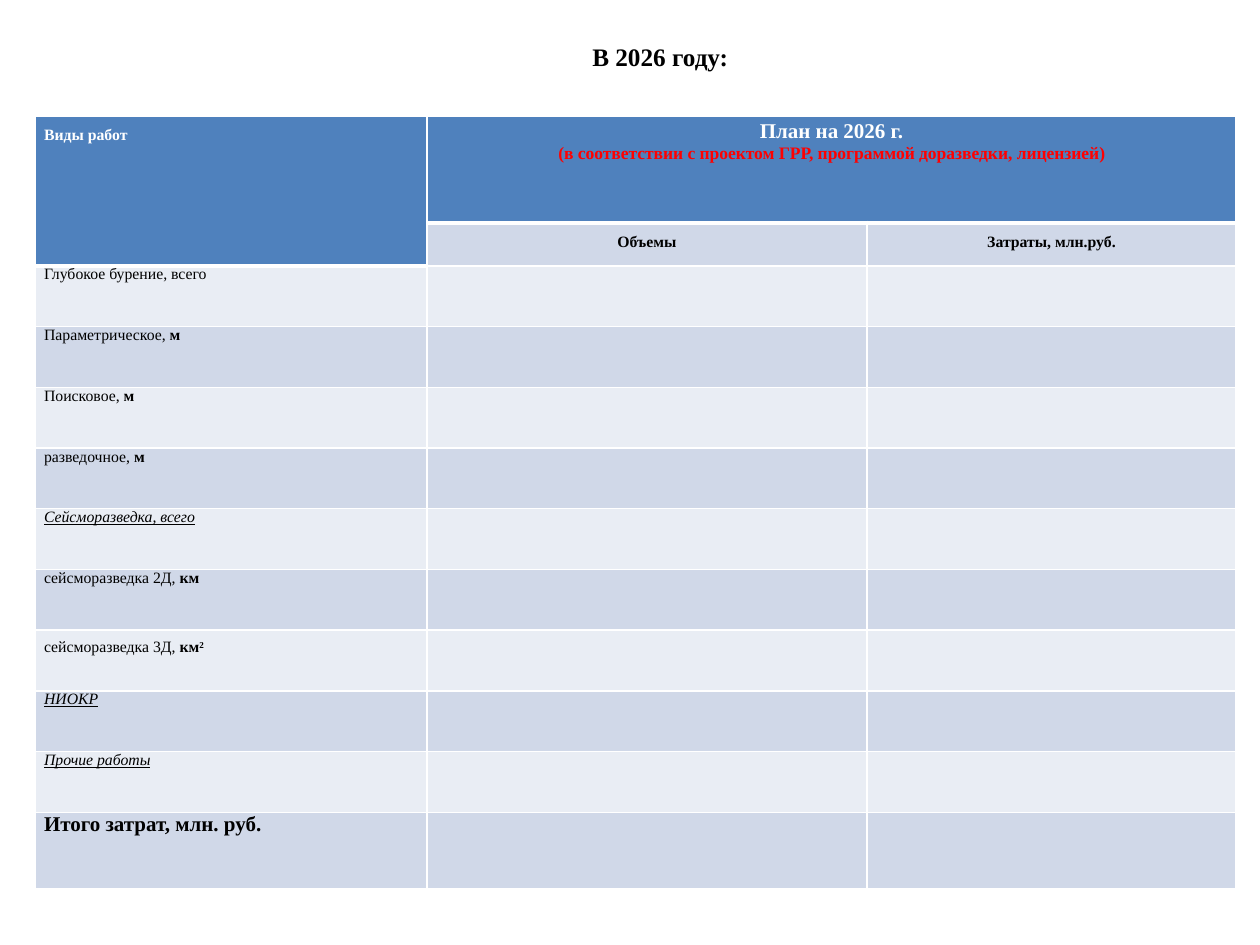
from pptx import Presentation
from pptx.dml.color import RGBColor
from pptx.enum import text
from pptx.oxml import parse_xml
from pptx.oxml.ns import nsdecls
from pptx.util import Inches, Pt

FONT = "Times New Roman"
BLACK = RGBColor(0x00, 0x00, 0x00)
WHITE = RGBColor(0xFF, 0xFF, 0xFF)
RED = RGBColor(0xFF, 0x00, 0x00)
HEADER_BLUE = RGBColor(0x4F, 0x81, 0xBD)
BANDS = (RGBColor(0xE9, 0xED, 0xF4), RGBColor(0xD0, 0xD8, 0xE8))

# Content: each row label is a list of (text, format) runs
TITLE = "В 2026 году:"
BOLD = {"bold": True}
GROUP = {"italic": True, "underline": True}
WORKS = [
    [("Глубокое бурение, всего", {})],
    [("Параметрическое,", {}), (" м", BOLD)],
    [("Поисковое, ", {}), ("м", BOLD)],
    [("разведочное, ", {}), ("м", BOLD)],
    [("Сейсморазведка, всего", GROUP)],
    [("сейсморазведка 2Д,", {}), (" км", BOLD)],
    [("сейсморазведка 3Д, ", {}), ("км", BOLD), ("2", {"bold": True, "raised": True})],
    [("НИОКР", GROUP)],
    [("Прочие работы", GROUP)],
    [("Итого затрат, млн. руб.", {"bold": True, "size": 12})],
]
AREA_ROW = 6  # the row with a superscript has wider line spacing

# Table geometry, in inches
LEFT, TOP, WIDTH, HEIGHT = 0.28, 0.92, 9.53, 6.14
COLUMNS = (3.11, 3.49, 2.93)
HEADS, TOTAL = (0.85, 0.34), 0.61
PLAIN_COUNT = len(WORKS) - 1
PLAIN = (HEIGHT - sum(HEADS) - TOTAL) / PLAIN_COUNT
ROWS = (*HEADS, *[PLAIN] * PLAIN_COUNT, TOTAL)


def add_text(para, words, size=9, color=BLACK, bold=False, italic=False,
             underline=False, raised=False, align=None, spacing=None):
    span = para.add_run()
    span.text = words
    font = span.font
    font.name, font.size, font.color.rgb = FONT, Pt(size), color
    font.bold, font.italic, font.underline = bold, italic, underline
    if raised:
        font._element.set("baseline", "30000")
    if align is not None:
        para.alignment = align
    if spacing is not None:
        para.line_spacing = spacing


def style_cell(cell, fill, thick_sides):
    cell.margin_left = cell.margin_right = Inches(0.07)
    cell.margin_top = cell.margin_bottom = 0
    for side in "LRTB":
        width = Pt(3 if side in thick_sides else 1)
        cell._tc.get_or_add_tcPr().append(parse_xml(
            f'<a:ln{side} {nsdecls("a")} w="{width}"><a:solidFill>'
            f'<a:srgbClr val="{WHITE}"/></a:solidFill></a:ln{side}>'))
    cell.fill.solid()
    cell.fill.fore_color.rgb = fill


deck = Presentation()
deck.slide_width, deck.slide_height = Inches(10), Inches(7.5)
page = deck.slides.add_slide(deck.slide_layouts[6])
CENTER = text.PP_ALIGN.CENTER

# Title
box = page.shapes.add_textbox(Inches(3.43), Inches(0.29), Inches(3.62), Inches(0.31))
box.text_frame.word_wrap = True
box.text_frame.vertical_anchor = text.MSO_ANCHOR.MIDDLE
add_text(box.text_frame.paragraphs[0], TITLE, size=14.4, bold=True, align=CENTER)

# Table grid
table = page.shapes.add_table(len(ROWS), len(COLUMNS), Inches(LEFT), Inches(TOP),
                              Inches(WIDTH), Inches(HEIGHT)).table
table.first_row = table.horz_banding = False
for column, width in zip(table.columns, COLUMNS):
    column.width = Inches(width)
for row, height in zip(table.rows, ROWS):
    row.height = Inches(height)

# Fills and borders: a thick line runs under the header cells
for r in range(len(ROWS)):
    for c in range(len(COLUMNS)):
        header_rows = 2 if c == 0 else 1
        fill = HEADER_BLUE if r < header_rows else BANDS[r % 2]
        thick = "B" if r < header_rows else "T" if r == header_rows else ""
        style_cell(table.cell(r, c), fill, thick)
table.cell(0, 0).merge(table.cell(1, 0))
table.cell(0, 1).merge(table.cell(0, 2))

# Header text
HEAD = {"bold": True, "spacing": Pt(15.8)}
add_text(table.cell(0, 0).text_frame.paragraphs[0], "Виды работ", color=WHITE, **HEAD)
plan = table.cell(0, 1).text_frame
add_text(plan.paragraphs[0], "План на 2026 г.", size=12, color=WHITE, align=CENTER, **HEAD)
add_text(plan.add_paragraph(),
         "(в соответствии с проектом ГРР, программой доразведки, лицензией)",
         size=10, color=RED, bold=True, align=CENTER)
for c, words in enumerate(("Объемы", "Затраты, млн.руб."), start=1):
    add_text(table.cell(1, c).text_frame.paragraphs[0], words, align=CENTER, **HEAD)

# Row labels
for index, runs in enumerate(WORKS):
    para = table.cell(index + len(HEADS), 0).text_frame.paragraphs[0]
    for words, style in runs:
        add_text(para, words, spacing=1.5 if index == AREA_ROW else None, **style)

deck.save("out.pptx")
